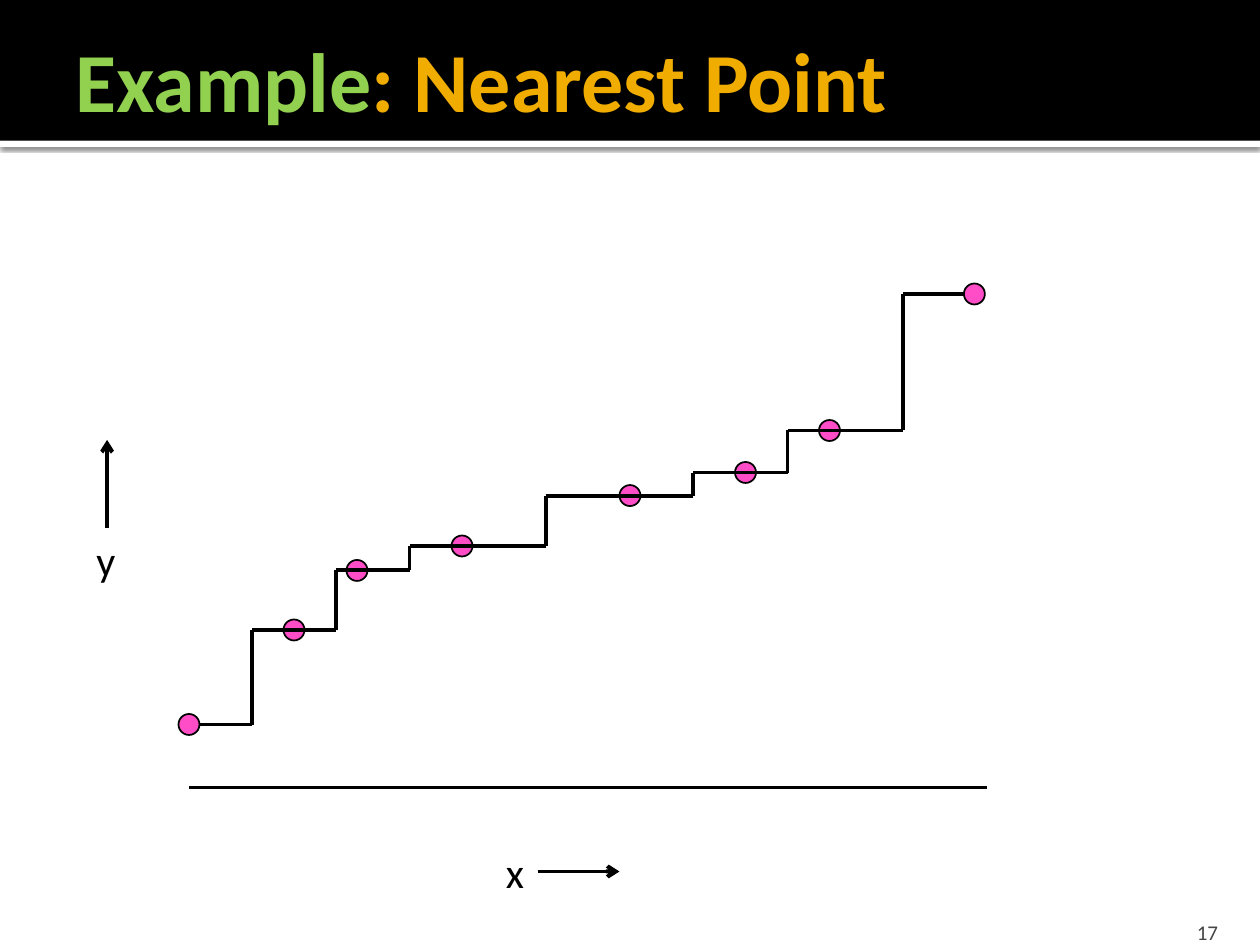
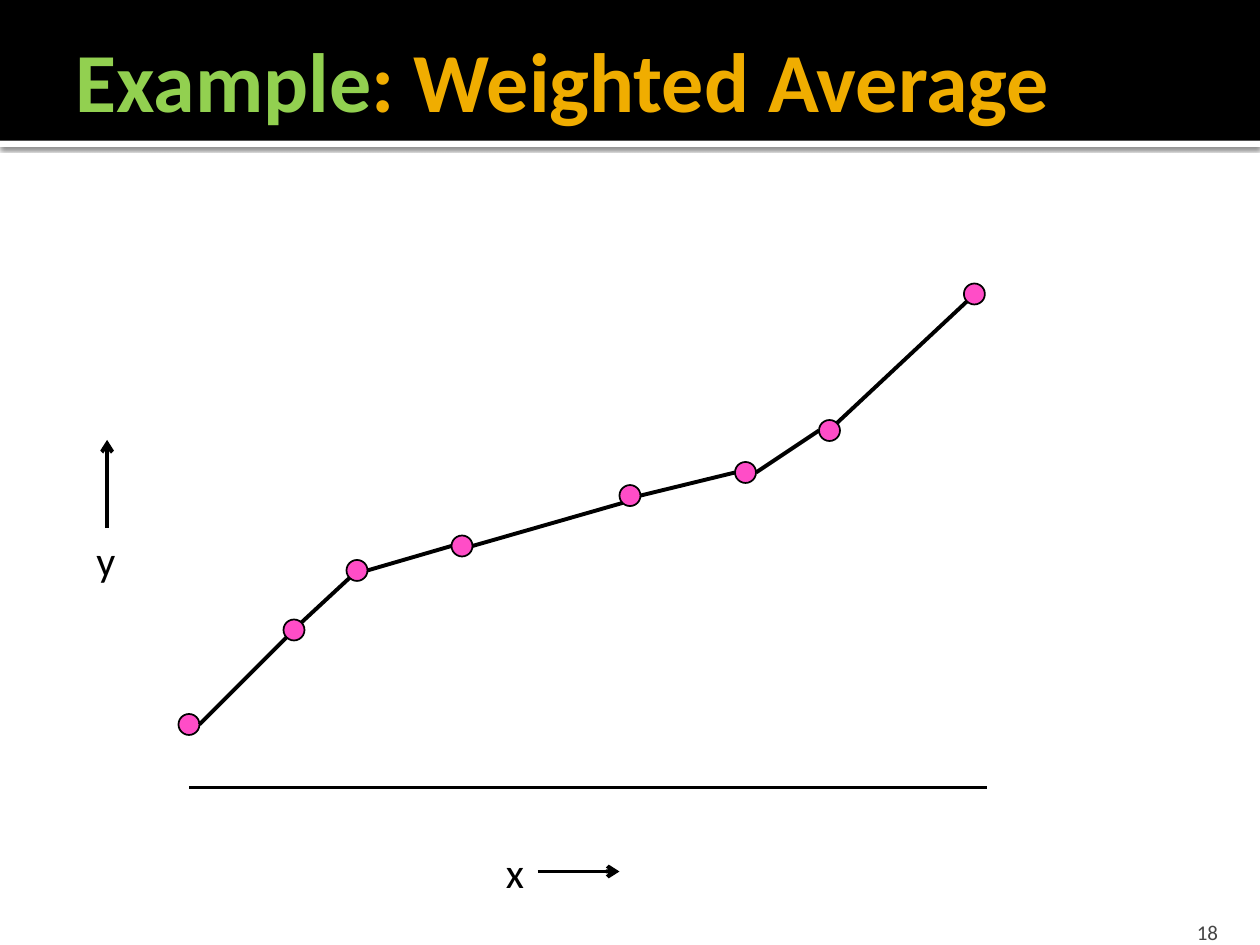
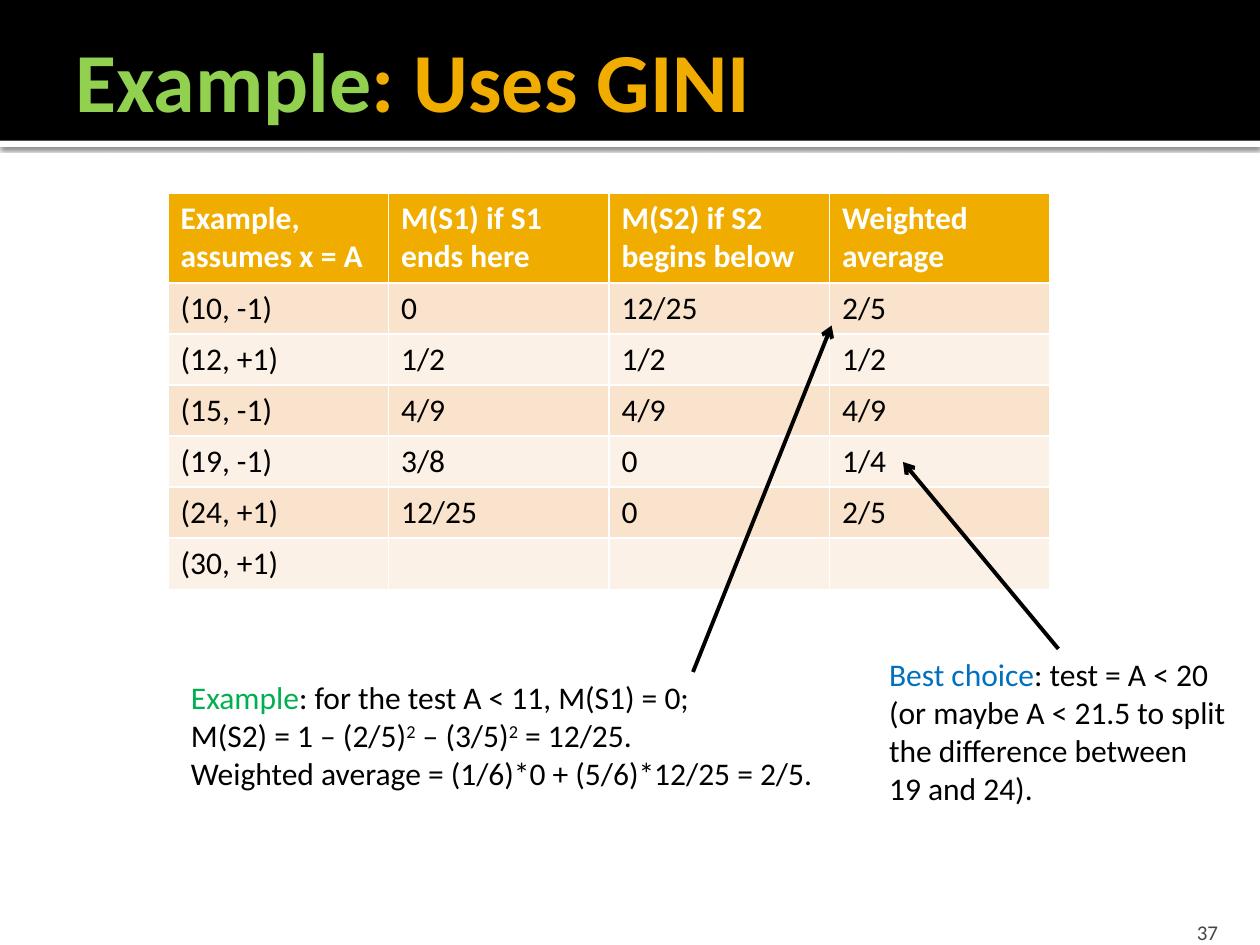
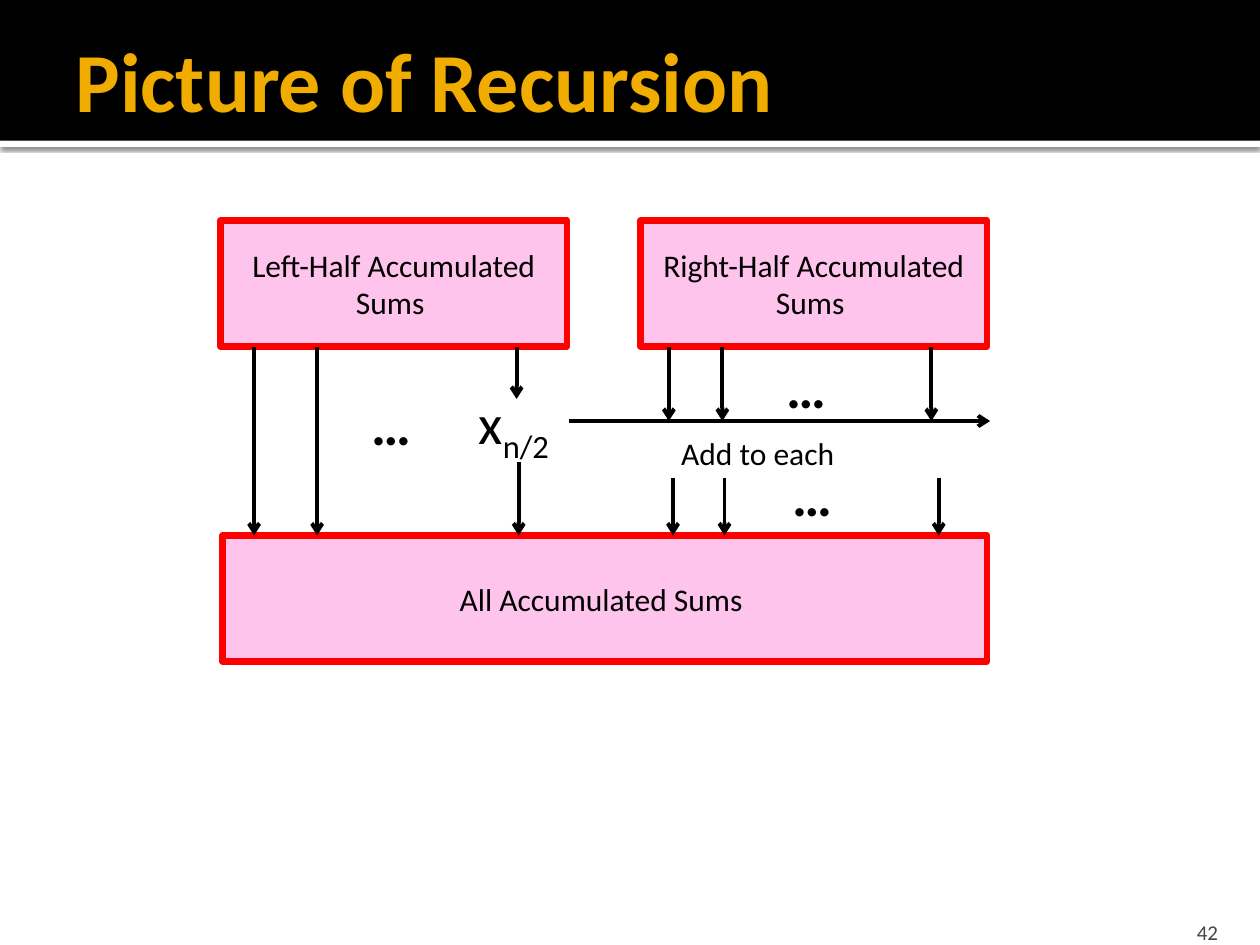
from lxml import etree
from pptx import Presentation
from pptx.dml.color import RGBColor
from pptx.enum.shapes import MSO_CONNECTOR as Connector, MSO_SHAPE as Preset
from pptx.enum.text import MSO_ANCHOR as Anchor, MSO_AUTO_SIZE as AutoSize, PP_ALIGN as Align
from pptx.oxml import parse_xml
from pptx.oxml.ns import nsdecls, qn
from pptx.util import Emu, Inches, Pt

COLUMNS, ROWS = 120, 90
CELL = Inches(10) / COLUMNS
FONT = "Calibri"
BLACK, WHITE, GREY = "000000", "FFFFFF", "454545"
GOLD, LIME, GREEN, BLUE = "F0AD00", "92D050", "00B050", "0070C0"
PINK, PALE_PINK, RED = "FF4DC7", "FFC4EC", "FF0000"
ROW_FILLS = ["FCF1E7", "F9E3CC"]
color = RGBColor.from_string


def add_box(slide, place, text="", size=18, ink=BLACK, accent=None, bold=False,
            preset=None, fill=None, outline=None, weight=1):
    """Place is in grid cells; "|" parts runs, "^" raises one and "_" lowers one."""
    place = [Emu(value * CELL) for value in place]
    if preset is None:
        shape = slide.shapes.add_textbox(*place)
        shape.text_frame.word_wrap = False
        shape.text_frame.auto_size = AutoSize.SHAPE_TO_FIT_TEXT
    else:
        shape = slide.shapes.add_shape(preset, *place)
        shape.shadow.inherit = False
        shape.fill.solid()
        shape.fill.fore_color.rgb = color(fill)
        if outline:
            shape.line.color.rgb = color(outline)
            shape.line.width = Pt(weight)
        else:
            shape.line.fill.background()
    if not text:
        return shape
    shape.text_frame.text = text
    for paragraph in shape.text_frame.paragraphs:
        paragraph.alignment = Align.CENTER if preset else Align.LEFT
        first, *others = paragraph.text.split("|")
        paragraph.text = first
        for piece in others:
            run = paragraph.add_run()
            run.text = piece.lstrip("^_")
            if piece[0] in "^_":
                baseline = "30000" if piece[0] == "^" else "-25000"
                run._r.get_or_add_rPr().set("baseline", baseline)
        for run in paragraph.runs:
            run.font.name, run.font.size, run.font.bold = FONT, Pt(size), bold
            run.font.color.rgb = color(ink)
    if accent:
        shape.text_frame.paragraphs[0].runs[0].font.color.rgb = color(accent)
    return shape


def add_line(slide, start, end, arrow=False):
    ends = [Emu(value * CELL) for value in (*start, *end)]
    line = slide.shapes.add_connector(Connector.STRAIGHT, *ends)
    line.line.color.rgb = color(BLACK)
    line.line.width = Pt(2.25)
    if arrow:
        etree.SubElement(line.line._get_or_add_ln(), qn("a:tailEnd"), type="arrow")
    etree.SubElement(line.element.spPr, qn("a:effectLst"))


presentation = Presentation()
presentation.slide_width = Emu(COLUMNS * CELL)
presentation.slide_height = Emu(ROWS * CELL)
layout = presentation.slide_layouts[5]

layout_title = layout.placeholders[0]
layout_title.left, layout_title.top = Emu(6 * CELL), Emu(2 * CELL)
layout_title.width, layout_title.height = Emu(114 * CELL), Emu(11 * CELL)
layout_title.text_frame.vertical_anchor = Anchor.MIDDLE
layout_title.text_frame.auto_size = AutoSize.NONE
layout_title.text_frame.margin_right = Inches(0.05)

titles = [
    ("Example|: Nearest Point", "17"),
    ("Example|: Weighted Average", "18"),
    ("Example|: Uses GINI", "37"),
    ("Picture of Recursion", "42"),
]
slides = []
for title, number in titles:
    slide = presentation.slides.add_slide(layout)
    slides.append(slide)
    paragraph = slide.shapes.title.text_frame.paragraphs[0]
    paragraph.alignment = Align.LEFT
    first, *others = title.split("|")
    paragraph.text = first
    for piece in others:
        paragraph.add_run().text = piece
    for run in paragraph.runs:
        run.font.name, run.font.size, run.font.bold = FONT, Pt(48), True
        run.font.color.rgb = color(LIME if run.text == "Example" else GOLD)
    number_box = add_box(slide, (107.6, 86.4, 9.6, 3.6), number, 12, GREY)
    number_box.text_frame.auto_size = AutoSize.NONE
    number_box.text_frame.word_wrap = True
    number_box.text_frame.vertical_anchor = Anchor.BOTTOM
    number_box.text_frame.margin_bottom = 0
    number_box.text_frame.paragraphs[0].alignment = Align.RIGHT
nearest, weighted, gini, recursion = slides

strip = add_box(nearest, (0, 13.4, COLUMNS, 0.6), preset=Preset.RECTANGLE, fill=WHITE)
band = add_box(nearest, (0, 0, COLUMNS, 13.4), preset=Preset.RECTANGLE, fill=BLACK)
strip.element.spPr.replace(strip.element.spPr.find(qn("a:effectLst")), parse_xml(
    f'<a:effectLst {nsdecls("a")}><a:outerShdw blurRad="31750" dist="10160" dir="5400000">'
    f'<a:srgbClr val="{BLACK}"><a:alpha val="60000"/></a:srgbClr></a:outerShdw></a:effectLst>'))
for index, shape in enumerate([strip, band], start=2):
    layout.shapes.element.insert(index, shape.element)

points = [(18, 69), (28, 60), (34, 54.33), (44, 52),
          (60, 47.2), (71, 45), (79, 41), (92.8, 28)]
for slide in (nearest, weighted):
    add_line(slide, (18, 75), (94, 75))
    for x, y in points:
        add_box(slide, (x - 1, y - 1, 2, 2), preset=Preset.OVAL, fill=PINK, outline=BLACK)
    add_box(slide, (47, 80, 4.2, 6), "x", 24)
    add_line(slide, (51.2, 83), (59, 83), arrow=True)
    add_box(slide, (8, 50.3, 4.3, 6), "y", 24)
    add_line(slide, (10.2, 50.3), (10.2, 41.9), arrow=True)

rises = [24, 32, 39, 52, 66, 75, 86]
heights = [y for x, y in points]
for left, right, y in zip([19, *rises], [*rises, 91.8], heights):
    add_line(nearest, (left, y), (right, y))
for x, low, high in zip(rises, heights, heights[1:]):
    add_line(nearest, (x, low), (x, high))

side, corner = (1, 0), (0.7, -0.7)
joins = [(side, corner), (corner, corner), (side, side), (side, corner),
         (side, side), (side, side), (corner, corner)]
for (x1, y1), (x2, y2), (leave, reach) in zip(points, points[1:], joins):
    add_line(weighted, (x1 + leave[0], y1 + leave[1]), (x2 - reach[0], y2 - reach[1]))

splits = [
    ("Example, assumes x = A", "M(S1) if S1 ends here", "M(S2) if S2 begins below",
     "Weighted average"),
    ("(10, -1)", "0", "12/25", "2/5"),
    ("(12, +1)", "1/2", "1/2", "1/2"),
    ("(15, -1)", "4/9", "4/9", "4/9"),
    ("(19, -1)", "3/8", "0", "1/4"),
    ("(24, +1)", "12/25", "0", "2/5"),
    ("(30, +1)", "", "", ""),
]
table_place = [Emu(value * CELL) for value in (16, 18.4, 84, 4.87 * len(splits))]
table = gini.shapes.add_table(len(splits), len(splits[0]), *table_place).table
for row, values in enumerate(splits):
    for column, value in enumerate(values):
        cell = table.cell(row, column)
        cell.fill.solid()
        cell.fill.fore_color.rgb = color(ROW_FILLS[row % 2] if row else GOLD)
        cell.text_frame.text = value
        for run in cell.text_frame.paragraphs[0].runs:
            run.font.name, run.font.size, run.font.bold = FONT, Pt(18), row == 0
            run.font.color.rgb = color(BLACK if row else WHITE)

add_box(gini, (83.5, 61.8, 34.6, 15.7),
        "Best choice|: test = A < 20\n(or maybe A < 21.5 to split\n"
        "the difference between\n19 and 24).", accent=BLUE)
add_line(gini, (100.8, 61.8), (86, 44), arrow=True)
add_box(gini, (17, 64, 62.3, 12.1),
        "Example|: for the test A < 11, M(S1) = 0;\n"
        "M(S2) = 1 – (2/5)|^2| – (3/5)|^2| = 12/25.\n"
        "Weighted average = (1/6)*0 + (5/6)*12/25 = 2/5.", accent=GREEN)
add_line(gini, (66, 64), (79.2, 31), arrow=True)

down_arrows = [
    (33, 51, [24.2, 30.2]),
    (33, 38, [49.2]),
    (44, 51, [49.4]),
    (33, 40.1, [63.7, 68.8, 88.7]),
    (45.5, 51, [64.1, 69, 89.4]),
]
sums_boxes = [
    ((21, 21, 33, 12), "Left-Half Accumulated Sums "),
    ((61, 21, 33, 12), "Right-Half Accumulated Sums "),
    ((21.2, 51, 72.8, 12), "All Accumulated Sums "),
]
for place, text in sums_boxes:
    add_box(recursion, place, text, preset=Preset.RECTANGLE,
            fill=PALE_PINK, outline=RED, weight=3.78)
for top, bottom, stops in down_arrows:
    for x in stops:
        add_line(recursion, (x, top), (x, bottom), arrow=True)
add_line(recursion, (54.2, 40.1), (94.3, 40.1), arrow=True)
add_box(recursion, (44.4, 36.4, 9.6, 7.7), "x|_n/2", 32)
add_box(recursion, (63.7, 40.7, 17.4, 4.8), "Add to each")
for left, top in [(34.2, 36.5), (73.7, 33), (74.3, 43.3)]:
    add_box(recursion, (left, top, 7.2, 7.7), "…", 32, bold=True)

presentation.save("out.pptx")
